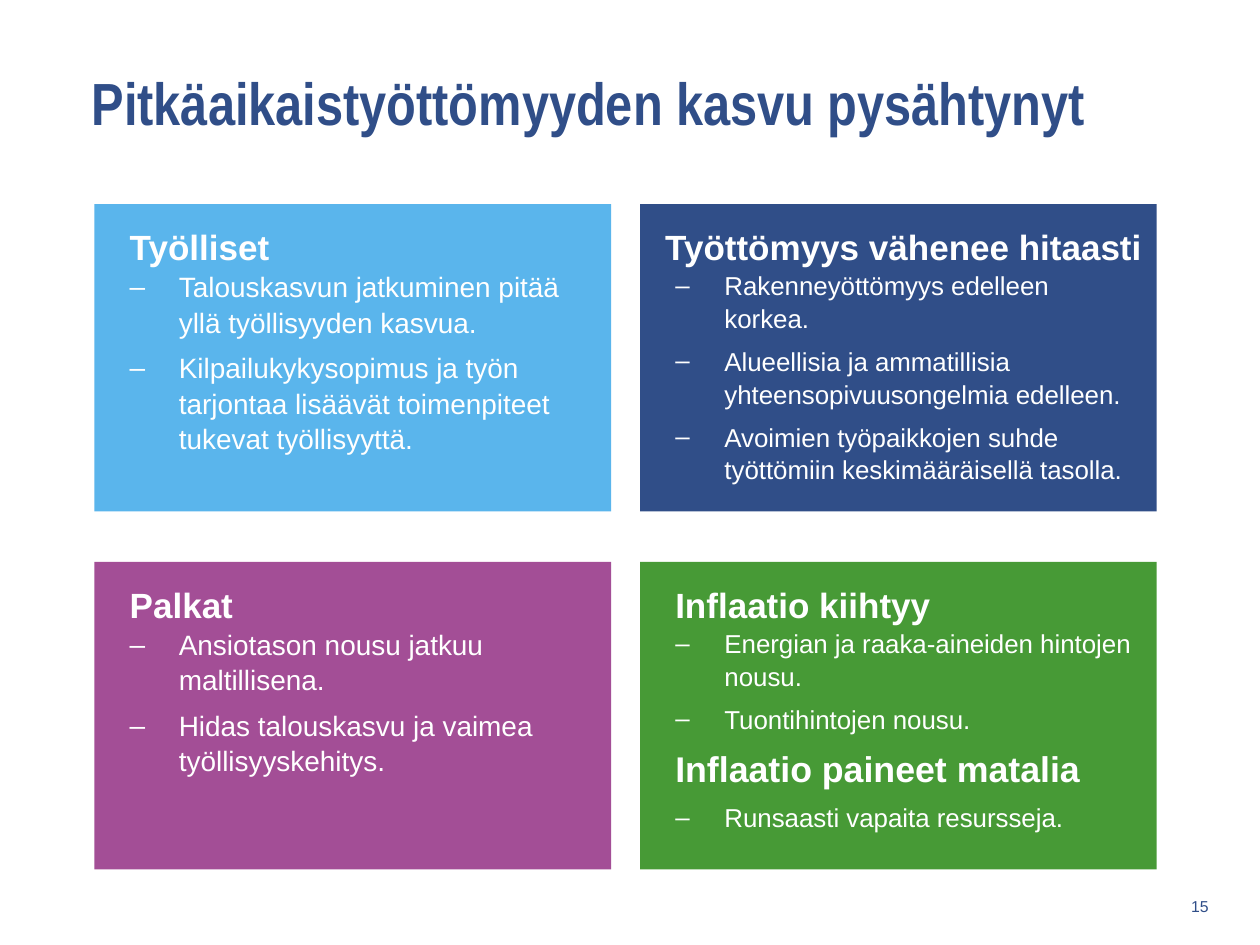
from dataclasses import dataclass

from lxml import etree
from pptx import Presentation
from pptx.dml.color import RGBColor
from pptx.enum.shapes import MSO_SHAPE
from pptx.enum.text import MSO_ANCHOR, PP_ALIGN
from pptx.oxml.ns import qn
from pptx.util import Inches, Pt

RECT = MSO_SHAPE.RECTANGLE
TOP, MIDDLE = MSO_ANCHOR.TOP, MSO_ANCHOR.MIDDLE
LEFT, RIGHT = PP_ALIGN.LEFT, PP_ALIGN.RIGHT


@dataclass(frozen=True)
class Theme:
    """Colours, fonts and type sizes of the slide."""
    navy: str = "304E88"
    sky: str = "5AB5EC"
    plum: str = "A34E96"
    green: str = "479A36"
    white: str = "FFFFFF"
    body_font: str = "Arial"
    title_font: str = "Arial Narrow"
    title: float = 34
    heading: float = 20
    subheading: float = 20.4
    large: float = 16
    small: float = 14.8
    number: float = 9


THEME = Theme()
GRID_LEFT, GRID_TOP = 0.75, 1.62
COL_STEP, ROW_STEP = 4.33, 2.84
PANEL_W, PANEL_H, HEADING_H = 4.1, 2.44, 0.55
HANG = 0.39
DASH = "‒"

PANELS = [
    (0, 0, THEME.sky, "Työlliset", THEME.large, [
        "Talouskasvun jatkuminen pitää yllä työllisyyden kasvua.",
        "Kilpailukykysopimus ja työn tarjontaa lisäävät toimenpiteet tukevat työllisyyttä."]),
    (1, 0, THEME.navy, "Työttömyys vähenee hitaasti", THEME.small, [
        "Rakenneyöttömyys edelleen korkea.",
        "Alueellisia ja ammatillisia yhteensopivuusongelmia edelleen.",
        "Avoimien työpaikkojen suhde työttömiin keskimääräisellä tasolla."]),
    (0, 1, THEME.plum, "Palkat", THEME.large, [
        "Ansiotason nousu jatkuu maltillisena.",
        "Hidas talouskasvu ja vaimea työllisyyskehitys."]),
    (1, 1, THEME.green, "Inflaatio kiihtyy", THEME.small, [
        "Energian ja raaka-aineiden hintojen nousu.",
        "Tuontihintojen nousu.",
        ("Inflaatio paineet matalia", THEME.subheading),
        "Runsaasti vapaita resursseja."]),
]
HEADING_BOXES = {(1, 0): (5, 4.33)}


def set_attrs(obj, values):
    """Set every attribute named in values."""
    for name, value in values.items():
        setattr(obj, name, value)


def set_frame(tf, insets, anchor=TOP):
    """Set wrapping, anchor and the four insets of a text frame."""
    left, top, right, bottom = map(Inches, insets)
    set_attrs(tf, {"word_wrap": True, "vertical_anchor": anchor,
                   "margin_left": left, "margin_top": top,
                   "margin_right": right, "margin_bottom": bottom})


def add_dash(p):
    """Give a paragraph a hanging dash bullet."""
    pPr = p._p.get_or_add_pPr()
    pPr.set("marL", str(Inches(HANG)))
    pPr.set("indent", str(-Inches(HANG)))
    etree.SubElement(pPr, qn("a:buFont")).set("typeface", THEME.body_font)
    etree.SubElement(pPr, qn("a:buChar")).set("char", DASH)


def write(p, text, size, color, bold=False, font=THEME.body_font, **layout):
    """Fill a paragraph with one formatted run."""
    set_attrs(p, {"alignment": LEFT, **layout})
    r = p.add_run()
    r.text = text
    set_attrs(r.font, {"name": font, "size": Pt(size), "bold": bold})
    r.font.color.rgb = RGBColor.from_string(color)


def add_text(s, box, insets, anchor, text, size, color, **style):
    """Add a text box holding one paragraph."""
    tf = s.shapes.add_textbox(*map(Inches, box)).text_frame
    set_frame(tf, insets, anchor)
    write(tf.paragraphs[0], text, size, color, **style)


def add_panel(s, col, row, color, heading, size, items):
    """Add a coloured panel with its bullets and heading."""
    x, y = GRID_LEFT + col * COL_STEP, GRID_TOP + row * ROW_STEP
    sp = s.shapes.add_shape(RECT, *map(Inches, (x, y, PANEL_W, PANEL_H)))
    sp.shadow.inherit = False
    sp.fill.solid()
    sp.fill.fore_color.rgb = RGBColor.from_string(color)
    sp.line.fill.background()
    tf = sp.text_frame
    set_frame(tf, (0.28, 0.51, 0.2, 0.2))
    for i, item in enumerate(items):
        p = tf.add_paragraph() if i else tf.paragraphs[0]
        bulleted = isinstance(item, str)
        text, points = (item, size) if bulleted else item
        if bulleted:
            add_dash(p)
        write(p, text, points, THEME.white, bold=not bulleted,
              space_after=Pt(6), line_spacing=1.05)
    left, width = HEADING_BOXES.get((col, row), (x, PANEL_W))
    add_text(s, (left, y, width, HEADING_H), (0.28, 0.16, 0.2, 0.2), TOP,
             heading, THEME.heading, THEME.white, bold=True,
             space_after=Pt(8), line_spacing=1.05)


def main():
    """Build the slide and save it."""
    prs = Presentation()
    set_attrs(prs, {"slide_width": Inches(10), "slide_height": Inches(7.5)})
    s = prs.slides.add_slide(prs.slide_layouts[6])
    insets = (0.1, 0.05, 0.1, 0.05)
    add_text(s, (0.63, 0.16, 8.47, 1.3), insets, MIDDLE,
             "Pitkäaikaistyöttömyyden kasvu pysähtynyt", THEME.title,
             THEME.navy, bold=True, font=THEME.title_font)
    add_text(s, (9.17, 7.03, 0.52, 0.32), insets, MIDDLE, "15",
             THEME.number, THEME.navy, alignment=RIGHT)
    for panel in PANELS:
        add_panel(s, *panel)
    prs.save("out.pptx")


if __name__ == "__main__":
    main()
